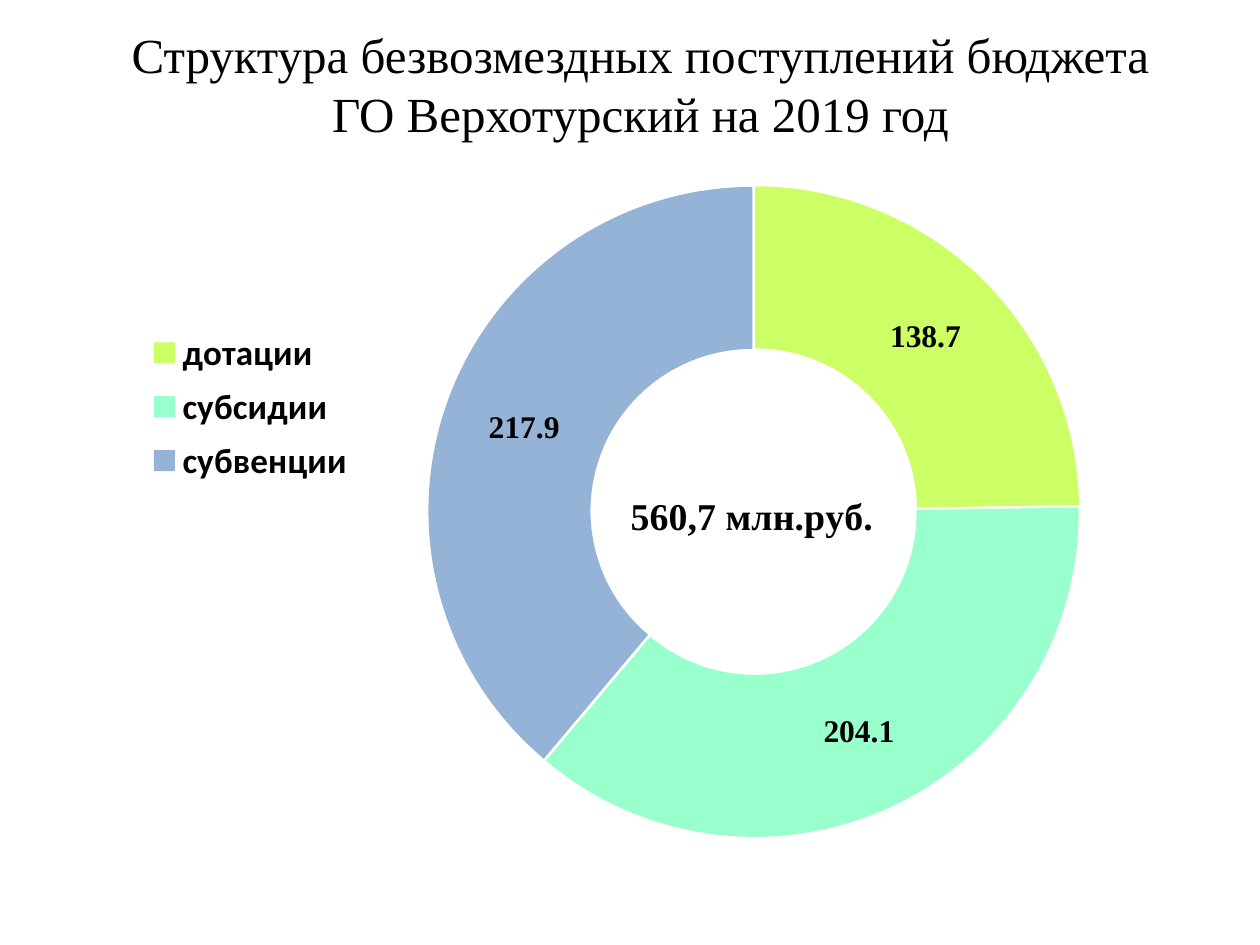
import pptx
import pptx.chart.data
import pptx.dml.color
import pptx.enum.chart
import pptx.enum.text
import pptx.oxml
import pptx.oxml.ns
import pptx.util
from pptx.util import Cm, Pt

RGBColor = pptx.dml.color.RGBColor
BLACK = RGBColor(0x00, 0x00, 0x00)
LIME = RGBColor(0xCC, 0xFF, 0x66)
MINT = RGBColor(0x99, 0xFF, 0xCC)
BLUE = RGBColor(0x95, 0xB3, 0xD7)
SERIF = "Times New Roman"
SANS = "Calibri"

# Content
HEADING = "Структура безвозмездных поступлений бюджета\vГО Верхотурский на 2019 год"
TOTAL = "560,7 млн.руб."
RECEIPTS = [
    ("дотации", 138.7, LIME),
    ("субсидии", 204.1, MINT),
    ("субвенции", 217.9, BLUE),
]

# Chart parts as fractions of the chart area
PLOT_PLACE = {"x": 0.28, "y": 0.09, "w": 0.65, "h": 0.87}
LEGEND_PLACE = {"x": 0.04, "y": 0.27, "w": 0.24, "h": 0.23}
TOTAL_PLACE = {"x": 0.49, "y": 0.49}


def style_font(font, name, size, bold=False):
    font.name = name
    font.size = Pt(size)
    font.bold = bold
    font.color.rgb = BLACK


def make_layout(place, inner=False):
    target = '<c:layoutTarget val="outer"/>' if inner else ""
    modes = "".join(f'<c:{key}Mode val="edge"/>' for key in place if key in "xy")
    sizes = "".join(f'<c:{key} val="{value}"/>' for key, value in place.items())
    return pptx.oxml.parse_xml(
        f'<c:layout {pptx.oxml.ns.nsdecls("c")}><c:manualLayout>'
        f"{target}{modes}{sizes}</c:manualLayout></c:layout>"
    )


def place_part(element, layout, position):
    """Replace the layout of a chart part, keeping the schema order."""
    for old in element.findall(pptx.oxml.ns.qn("c:layout")):
        element.remove(old)
    element.insert(position, layout)


deck = pptx.Presentation()
deck.slide_width, deck.slide_height = Cm(25.4), Cm(19.05)
page = deck.slides.add_slide(deck.slide_layouts[6])

# Heading
box = page.shapes.add_textbox(Cm(1), Cm(0), Cm(23.82), Cm(3.38))
frame = box.text_frame
frame.word_wrap = True
frame.vertical_anchor = pptx.enum.text.MSO_ANCHOR.MIDDLE
frame.text = HEADING
frame.paragraphs[0].alignment = pptx.enum.text.PP_ALIGN.CENTER
for span in frame.paragraphs[0].runs:
    style_font(span.font, SERIF, 28)

# Doughnut chart
data = pptx.chart.data.CategoryChartData(number_format="0.0")
data.categories = [name for name, value, color in RECEIPTS]
data.add_series(TOTAL, [value for name, value, color in RECEIPTS])
chart = page.shapes.add_chart(
    pptx.enum.chart.XL_CHART_TYPE.DOUGHNUT,
    Cm(1.4), Cm(2.39), Cm(22.81), Cm(15.09), data,
).chart
style_font(chart.font, SANS, 18)
place_part(chart.plots[0]._element.getparent(), make_layout(PLOT_PLACE, True), 0)

# Ring segments and their values
plot = chart.plots[0]
plot.vary_by_categories = True
series = plot.series[0]
for index, (name, value, color) in enumerate(RECEIPTS):
    fill = series.points[index].format.fill
    fill.solid()
    fill.fore_color.rgb = color
explosion = pptx.oxml.parse_xml(f'<c:explosion {pptx.oxml.ns.nsdecls("c")} val="1"/>')
series._element.find(pptx.oxml.ns.qn("c:dPt")).addprevious(explosion)
labels = series.data_labels
labels.show_value = True
labels.show_percentage = False
labels.show_category_name = False
labels.show_legend_key = False
style_font(labels.font, SERIF, 18, True)

# Total in the middle of the ring
chart.has_title = True
title = chart.chart_title
title.include_in_layout = False
title.text_frame.text = TOTAL
style_font(title.text_frame.paragraphs[0].runs[0].font, SERIF, 21.6, True)
place_part(title._element, make_layout(TOTAL_PLACE), 1)

# Legend on the left
chart.has_legend = True
legend = chart.legend
legend.position = pptx.enum.chart.XL_LEGEND_POSITION.RIGHT
legend.include_in_layout = False
style_font(legend.font, SANS, 20, True)
place_part(legend._element, make_layout(LEGEND_PLACE), 1)

deck.save("out.pptx")
